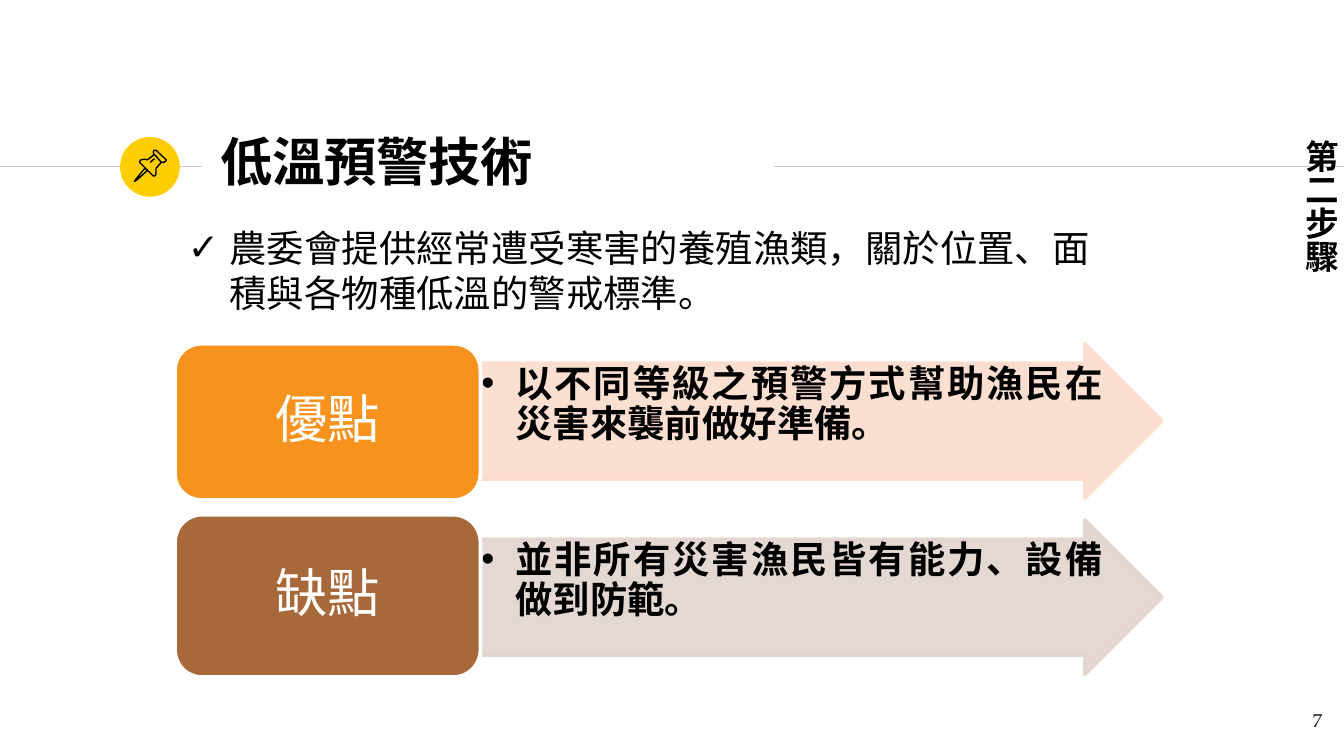
from lxml.etree import SubElement
from pptx import Presentation
from pptx.dml.color import RGBColor
from pptx.enum.shapes import MSO_CONNECTOR, MSO_SHAPE
from pptx.enum.text import MSO_ANCHOR, MSO_AUTO_SIZE, PP_ALIGN
from pptx.oxml.ns import qn
from pptx.util import Cm, Pt

BLACK = RGBColor(0x00, 0x00, 0x00)
WHITE = RGBColor(0xFF, 0xFF, 0xFF)
INK = RGBColor(0x1D, 0x1D, 0x1B)
RULE_GREY = RGBColor(0xCC, 0xCC, 0xCC)
YELLOW = RGBColor(0xFF, 0xCD, 0x00)
ORANGE = RGBColor(0xF6, 0x92, 0x1D)
BROWN = RGBColor(0xA7, 0x69, 0x3A)
PEACH = RGBColor(0xFB, 0xDC, 0xCD)
TAUPE = RGBColor(0xE1, 0xD4, 0xCE)

SANS_JP = "Noto Sans CJK JP"
SANS_SC = "Noto Sans CJK SC"

deck = Presentation()
deck.slide_width, deck.slide_height = Cm(25.4), Cm(14.29)
page = deck.slides.add_slide(deck.slide_layouts[6])


def add_text(words, bounds, font, color=BLACK, frame=None, para_format=None, bullet=None, indent=0):
    """Add a one-paragraph text box; bounds and indent are in centimetres."""
    box = page.shapes.add_textbox(*map(Cm, bounds))
    box.text_frame.word_wrap = True
    for key, value in (frame or {}).items():
        setattr(box.text_frame, key, value)
    para = box.text_frame.paragraphs[0]
    for key, value in (para_format or {}).items():
        setattr(para, key, value)
    span = para.add_run()
    span.text = words
    for key, value in font.items():
        setattr(span.font, key, value)
    span.font.color.rgb = color
    SubElement(span.font._element, qn("a:ea"), typeface=font["name"])
    if bullet:
        properties = para._p.get_or_add_pPr()
        properties.set("marL", str(Cm(indent)))
        properties.set("indent", str(-Cm(indent)))
        SubElement(properties, qn("a:buFont"), typeface="Arial")
        SubElement(properties, qn("a:buChar"), char=bullet)
    return box


def add_block(kind, bounds, fill, line=None, alpha=None):
    """Add a filled preset shape, with an optional outline and opacity in percent."""
    block = page.shapes.add_shape(kind, *map(Cm, bounds))
    block.shadow.inherit = False
    block.fill.solid()
    block.fill.fore_color.rgb = fill
    if line is None:
        block.line.fill.background()
    else:
        block.line.color.rgb = line
        block.line.width = Pt(2)
    if alpha:
        for color in block._element.spPr.iter(qn("a:srgbClr")):
            SubElement(color, qn("a:alpha"), val=str(alpha * 1000))
    return block


# Rules on both sides of the title, and the badge
for start, end in ((0, 3.81), (14.63, 25.4)):
    rule = page.shapes.add_connector(MSO_CONNECTOR.STRAIGHT, Cm(start), Cm(3.15), Cm(end), Cm(3.15))
    rule.line.color.rgb = RULE_GREY
    rule.line.width = Pt(0.75)
    SubElement(rule._element.spPr, qn("a:effectLst"))
add_block(MSO_SHAPE.OVAL, (2.27, 2.59, 1.13, 1.13), YELLOW)

# Pushpin: needle, cap, body and highlight, in hundredths of a centimetre
pin_parts = [
    ([(274, 318), (256, 340), (254, 343), (259, 340), (279, 322)], True),
    ([(292, 292), (305, 307), (310, 307), (314, 304), (314, 302), (295, 284),
      (291, 284), (290, 287), (290, 290)], True),
    ([(292, 292), (279, 302), (271, 301), (265, 303), (264, 307), (290, 333),
      (294, 332), (295, 325), (295, 318), (305, 307)], False),
    ([(284, 307), (292, 300)], False),
]
for points, closed in pin_parts:
    builder = page.shapes.build_freeform(*points[0], scale=Cm(0.01))
    builder.add_line_segments(points[1:], close=closed)
    outline = builder.convert_to_shape()
    outline.shadow.inherit = False
    outline.fill.background()
    outline.line.color.rgb = BLACK
    outline.line.width = Pt(0.75)

# Page number, side label, title and introduction
margins = ("margin_left", "margin_top", "margin_right", "margin_bottom")
add_text("7", (23.72, 13.18, 1.52, 1.09), {"name": "TeX Gyre Pagella", "size": Pt(10)}, INK,
         frame=dict.fromkeys(margins, Cm(0.25)), para_format={"alignment": PP_ALIGN.RIGHT})
label = add_text("第二步驟", (24.21, 2.39, 1.27, 2.77), {"name": SANS_JP, "size": Pt(18), "bold": True},
                 frame={"word_wrap": False, "auto_size": MSO_AUTO_SIZE.SHAPE_TO_FIT_TEXT})
label.text_frame._txBody.bodyPr.set("vert", "eaVert")
add_text("低溫預警技術", (3.91, 2.31, 12.7, 1.45), {"name": SANS_JP, "size": Pt(28), "bold": True})
add_text("農委會提供經常遭受寒害的養殖漁類，關於位置、面積與各物種低溫的警戒標準。",
         (3.3, 4.14, 18.21, 1.96), {"name": SANS_JP, "size": Pt(20)}, bullet="✓", indent=0.79)

# Advantage and drawback rows: an arrow with its point, and a heading card
detail_frame = dict.fromkeys(margins, Cm(0.03))
heading_frame = dict(zip(margins, (Cm(0.3), Cm(0.15)) * 2), vertical_anchor=MSO_ANCHOR.MIDDLE)
rows = [
    ("優點", "以不同等級之預警方式幫助漁民在災害來襲前做好準備。", ORANGE, PEACH, 6.5, 6.5, 2.95),
    ("缺點", "並非所有災害漁民皆有能力、設備做到防範。", BROWN, TAUPE, 9.83, 9.73, 3.07),
]
for heading, detail, strong, pale, arrow_top, card_top, card_height in rows:
    arrow = add_block(MSO_SHAPE.RIGHT_ARROW, (9.07, arrow_top, 12.89, 2.92), pale, pale, alpha=90)
    arrow.adjustments[0] = 0.75
    add_text(detail, (9.07, arrow_top + 0.37, 11.8, 2.18),
             {"name": SANS_SC, "size": Pt(20), "bold": True}, frame=detail_frame,
             para_format={"alignment": PP_ALIGN.JUSTIFY, "line_spacing": 0.9}, bullet="•", indent=0.64)
    add_block(MSO_SHAPE.ROUNDED_RECTANGLE, (3.31, card_top, 5.77, card_height), strong, WHITE)
    add_text(heading, (3.46, card_top + 0.14, 5.47, card_height - 0.28),
             {"name": SANS_JP, "size": Pt(28)}, WHITE, frame=heading_frame,
             para_format={"alignment": PP_ALIGN.CENTER, "line_spacing": 0.9})

deck.save("out.pptx")
